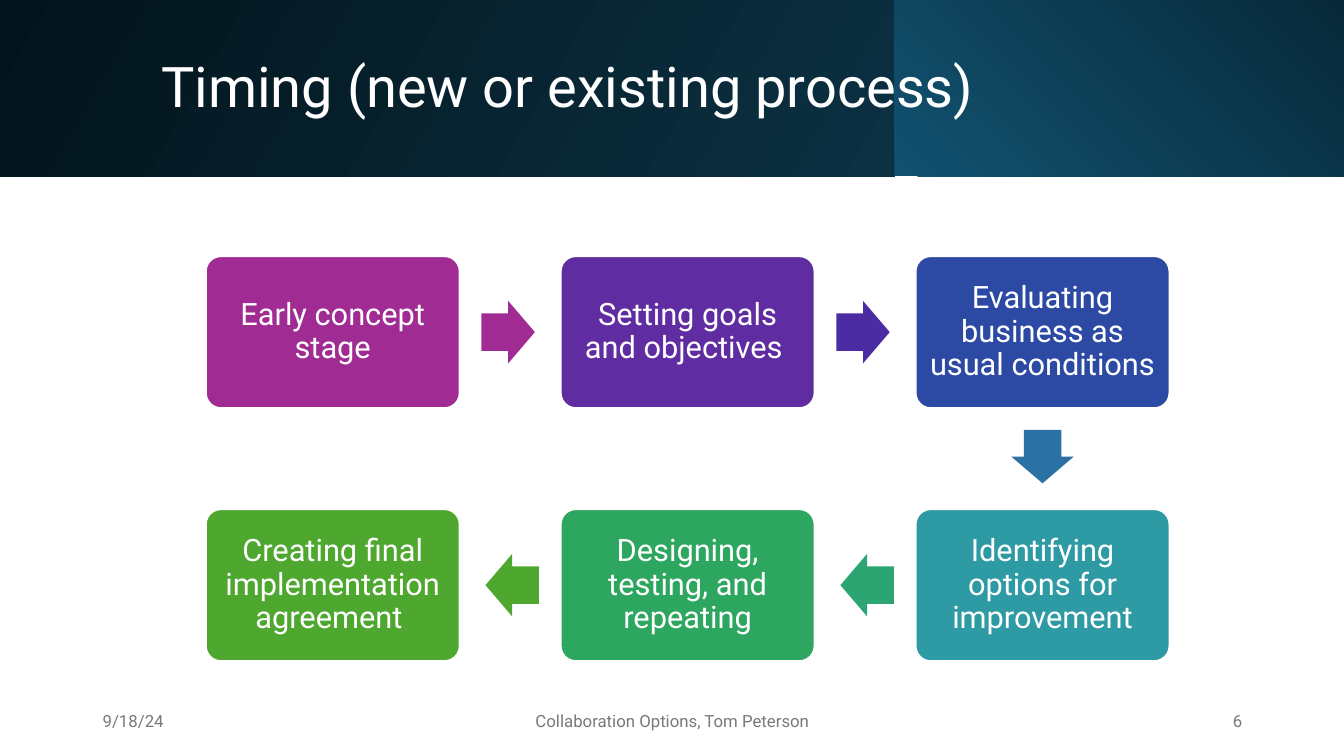
from itertools import pairwise

from pptx import Presentation
from pptx.dml.color import RGBColor
from pptx.enum.shapes import MSO_SHAPE
from pptx.enum.text import MSO_ANCHOR, PP_ALIGN
from pptx.util import Inches, Pt

RECTANGLE = MSO_SHAPE.RECTANGLE
STEP_SHAPE = MSO_SHAPE.ROUNDED_RECTANGLE
ARROW_SHAPE = MSO_SHAPE.RIGHT_ARROW
MIDDLE = MSO_ANCHOR.MIDDLE
LEFT, CENTER, RIGHT = PP_ALIGN.LEFT, PP_ALIGN.CENTER, PP_ALIGN.RIGHT

FONT = "Roboto"
COLORS = {
    "white": "FFFFFF",
    "footer": "797979",
    "header dark": "03131B",
    "header mid": "0B3142",
    "accent bright": "115270",
    "accent dark": "08293A",
}

SLIDE_W, SLIDE_H = 13.33, 7.5
HEADER_H = 1.75
HEADER_SPLIT = 8.87

GRID_LEFT, GRID_TOP = 2.04, 2.54
COLUMN_PITCH, ROW_PITCH = 3.52, 2.51
STEP_W, STEP_H = 2.52, 1.51
ARROW_W, ARROW_H = 0.53, 0.62
ARROW_SETBACK = 0.02

# Column, row, wording, box colour, colour of the arrow leading into the box
STEPS = [
    (0, 0, "Early concept stage", "A02B93", None),
    (1, 0, "Setting goals and objectives ", "5F2CA1", "A02B93"),
    (2, 0, "Evaluating business as usual conditions", "2C49A3", "4B2CA2"),
    (2, 1, "Identifying options for improvement", "2D9AA4", "2C71A4"),
    (1, 1, "Designing, testing, and repeating", "2DA65F", "2DA573"),
    (0, 1, "Creating final implementation agreement ", "4EA72E", "4EA72E"),
]

FOOTER_TOP, FOOTER_H = 6.95, 0.4
FOOTER = [
    (0.92, 3, "9/18/24", LEFT),
    (4.42, 4.5, "Collaboration Options, Tom Peterson", CENTER),
    (9.42, 3, "6", RIGHT),
]


def rgb(value):
    return RGBColor.from_string(value)


def place(shape, left, top, width, height):
    shape.left, shape.top = Inches(left), Inches(top)
    shape.width, shape.height = Inches(width), Inches(height)


def write(shape, text, size, color, align, spacing=1.0):
    frame = shape.text_frame
    frame.word_wrap = True
    frame.vertical_anchor = MIDDLE
    frame.text = text
    paragraph = frame.paragraphs[0]
    paragraph.alignment = align
    paragraph.line_spacing = spacing
    paragraph.font.name = FONT
    paragraph.font.size = Pt(size)
    paragraph.font.color.rgb = rgb(color)


def add_block(slide, preset, left, top, width, height):
    block = slide.shapes.add_shape(
        preset, Inches(left), Inches(top), Inches(width), Inches(height))
    block.shadow.inherit = False
    block.line.fill.background()
    return block


def add_header_panel(slide, left, right, start, end, angle):
    """Add a gradient panel behind the title; angle runs counter-clockwise."""
    panel = add_block(slide, RECTANGLE, left, 0, right - left, HEADER_H)
    panel.fill.gradient()
    panel.fill.gradient_angle = angle
    for stop, color in zip(panel.fill.gradient_stops, (start, end)):
        stop.color.rgb = rgb(COLORS[color])
    slide.shapes.title.element.addprevious(panel.element)


def add_title(slide, text):
    title = slide.shapes.title
    place(title, 1.5, 0.32, 10.82, 1.13)
    write(title, text, 40, COLORS["white"], LEFT, 0.9)


def step_center(column, row):
    return (GRID_LEFT + column * COLUMN_PITCH + STEP_W / 2,
            GRID_TOP + row * ROW_PITCH + STEP_H / 2)


def add_step(slide, column, row, text, color):
    x, y = step_center(column, row)
    step = add_block(slide, STEP_SHAPE,
                     x - STEP_W / 2, y - STEP_H / 2, STEP_W, STEP_H)
    step.adjustments[0] = 0.1
    step.fill.solid()
    step.fill.fore_color.rgb = rgb(color)
    step.line.color.rgb = rgb(COLORS["white"])
    step.line.width = Pt(1.5)
    frame = step.text_frame
    frame.margin_left = frame.margin_right = Inches(0.09)
    frame.margin_top = frame.margin_bottom = Inches(0.09)
    write(step, text, 22, COLORS["white"], CENTER, 0.9)


def add_arrow(slide, source, target, color):
    """Add a block arrow midway between two grid cells, set slightly back."""
    across, down = target[0] - source[0], target[1] - source[1]
    (x1, y1), (x2, y2) = step_center(*source), step_center(*target)
    x = (x1 + x2) / 2 - ARROW_SETBACK * across
    y = (y1 + y2) / 2 - ARROW_SETBACK * down
    arrow = add_block(slide, ARROW_SHAPE,
                      x - ARROW_W / 2, y - ARROW_H / 2, ARROW_W, ARROW_H)
    arrow.adjustments[0], arrow.adjustments[1] = 0.6, 0.5
    arrow.rotation = {(1, 0): 0, (0, 1): 90, (-1, 0): 180}[across, down]
    arrow.fill.solid()
    arrow.fill.fore_color.rgb = rgb(color)


def add_footer(slide, left, width, text, align):
    footer = slide.shapes.add_textbox(
        Inches(left), Inches(FOOTER_TOP), Inches(width), Inches(FOOTER_H))
    write(footer, text, 12, COLORS["footer"], align)


def main():
    deck = Presentation()
    deck.slide_width, deck.slide_height = Inches(SLIDE_W), Inches(SLIDE_H)
    slide = deck.slides.add_slide(deck.slide_layouts[5])

    add_header_panel(slide, 0, HEADER_SPLIT, "header dark", "header mid", 330)
    add_header_panel(slide, HEADER_SPLIT, SLIDE_W,
                     "accent bright", "accent dark", 45)
    add_title(slide, "Timing (new or existing process)")

    for column, row, text, color, _ in STEPS:
        add_step(slide, column, row, text, color)
    for source, target in pairwise(STEPS):
        add_arrow(slide, source[:2], target[:2], target[4])
    for part in FOOTER:
        add_footer(slide, *part)

    deck.save("out.pptx")


if __name__ == "__main__":
    main()
